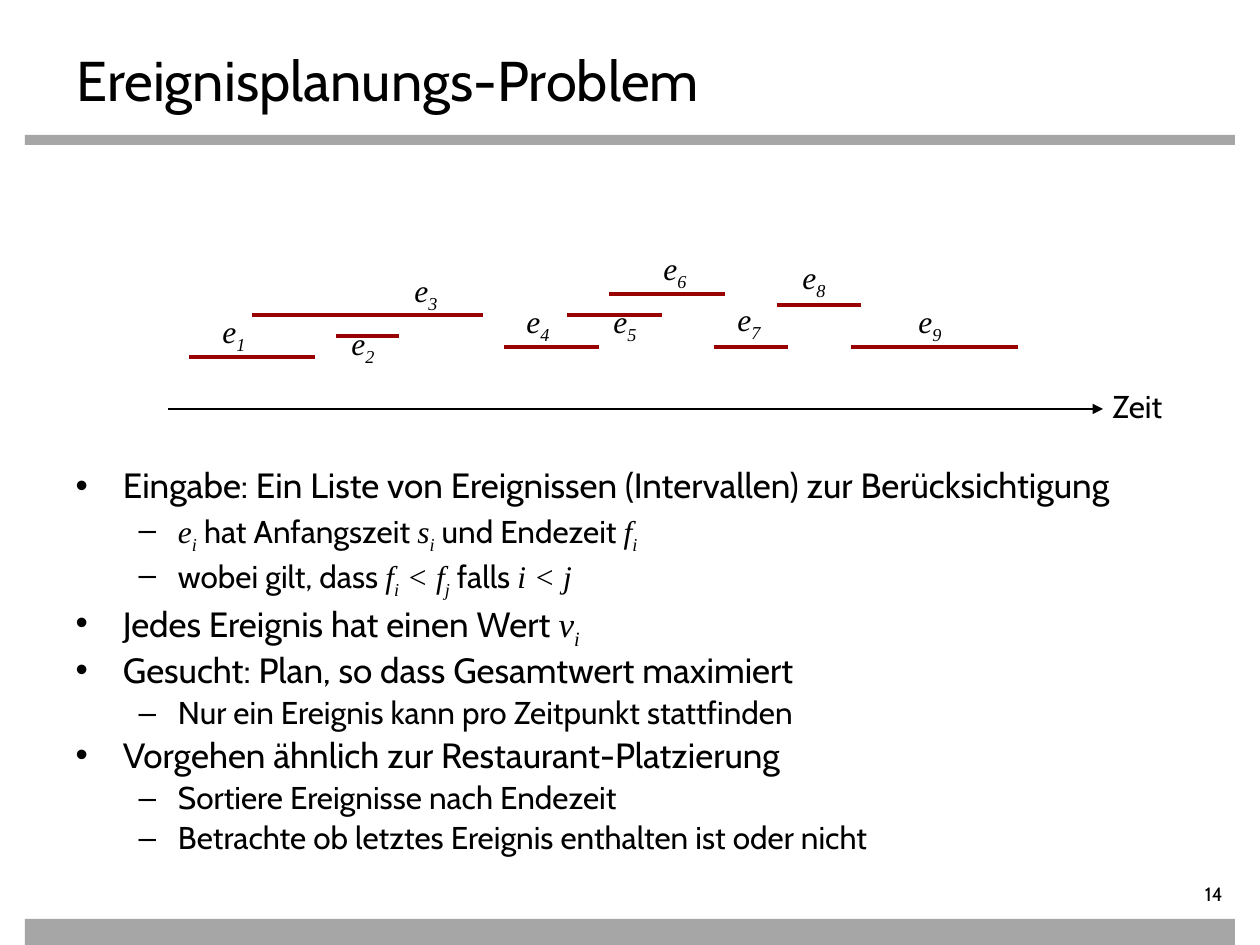
from typing import NamedTuple

from lxml.etree import SubElement
from pptx import Presentation
from pptx.dml.color import RGBColor
from pptx.enum.shapes import MSO_CONNECTOR as Connector, MSO_SHAPE as Shape
from pptx.enum.text import MSO_ANCHOR as Anchor, MSO_AUTO_SIZE as AutoSize, PP_ALIGN as Align
from pptx.oxml.ns import qn
from pptx.util import Emu, Pt

EMU_PER_PX = 914400 / 126
COLORS = {"text": "000000", "bar": "A6A6A6", "event": "990000"}
SANS, SERIF = "Cabin", "Times New Roman"


class Box(NamedTuple):
    left: int
    top: int
    width: int
    height: int


class Run(NamedTuple):
    text: str
    math: bool = False
    sub: bool = False


class Item(NamedTuple):
    level: int
    runs: list[Run]


class Event(NamedTuple):
    start: int
    end: int
    y: int
    label_left: int
    label_top: int


def px(length: int) -> Emu:
    return Emu(round(length * EMU_PER_PX))


def color(name: str) -> RGBColor:
    return RGBColor.from_string(COLORS[name])


def indexed(symbol: str, index: str) -> list[Run]:
    """A variable in italics with its subscript."""
    return [Run(symbol, math=True), Run(index, math=True, sub=True)]


def write(paragraph, runs: list[Run], size: int) -> None:
    for part in runs:
        run = paragraph.add_run()
        run.text = part.text
        formats = {"name": SERIF if part.math else SANS, "size": Pt(size), "italic": part.math}
        for name, value in formats.items():
            setattr(run.font, name, value)
        run.font.color.rgb = color("text")
        if part.sub:
            run.font._element.set("baseline", "-25000")


def place(shape, box: Box) -> None:
    for name, value in box._asdict().items():
        setattr(shape, name, px(value))


def add_bar(slide, box: Box) -> None:
    bar = slide.shapes.add_shape(Shape.RECTANGLE, *map(px, box))
    bar.shadow.inherit = False
    bar.fill.solid()
    bar.fill.fore_color.rgb = color("bar")
    bar.line.fill.background()


def add_line(slide, start: int, end: int, y: int, color_name: str, width: float):
    line = slide.shapes.add_connector(Connector.STRAIGHT, px(start), px(y), px(end), px(y))
    line.line.color.rgb = color(color_name)
    line.line.width = Pt(width)
    SubElement(line._element.spPr, qn("a:effectLst"))
    return line


def add_label(slide, box: Box, runs: list[Run], size: int = 18):
    label = slide.shapes.add_textbox(*map(px, box))
    label.text_frame.word_wrap = False
    write(label.text_frame.paragraphs[0], runs, size)
    return label.text_frame


EVENTS = [
    Event(189, 315, 357, 210, 306),
    Event(336, 399, 336, 339, 318),
    Event(252, 483, 315, 402, 265),
    Event(504, 599, 347, 514, 296),
    Event(567, 662, 315, 601, 296),
    Event(609, 725, 294, 651, 243),
    Event(714, 788, 347, 725, 294),
    Event(777, 861, 305, 790, 252),
    Event(851, 1018, 347, 906, 296),
]

ITEMS = [
    Item(0, [Run("Eingabe: Ein Liste von Ereignissen (Intervallen) zur Berücksichtigung")]),
    Item(1, [*indexed("e", "i"), Run(" hat Anfangszeit "), *indexed("s", "i"),
             Run(" und Endezeit "), *indexed("f", "i")]),
    Item(1, [Run("wobei gilt, dass "), *indexed("f", "i"), *indexed(" < f", "j"),
             Run(" falls "), Run("i < j", math=True)]),
    Item(0, [Run("Jedes Ereignis hat einen Wert "), *indexed("v", "i")]),
    Item(0, [Run("Gesucht: Plan, so dass Gesamtwert maximiert")]),
    Item(1, [Run("Nur ein Ereignis kann pro Zeitpunkt stattfinden")]),
    Item(0, [Run("Vorgehen ähnlich zur Restaurant-Platzierung")]),
    Item(1, [Run("Sortiere Ereignisse nach Endezeit")]),
    Item(1, [Run("Betrachte ob letztes Ereignis enthalten ist oder nicht")]),
]


def fill_title(title) -> None:
    place(title, Box(64, 35, 1134, 69))
    frame = title.text_frame
    frame.auto_size = AutoSize.NONE
    frame.vertical_anchor = Anchor.TOP
    frame.margin_top = px(10)
    frame.paragraphs[0].alignment = Align.LEFT
    write(frame.paragraphs[0], [Run("Ereignisplanungs-Problem")], 32)


def fill_body(body) -> None:
    """Bullets, indents and paragraph gaps come from the template's list levels."""
    place(body, Box(63, 462, 1134, 417))
    frame = body.text_frame
    frame.auto_size = AutoSize.NONE
    for number, item in enumerate(ITEMS):
        paragraph = frame.add_paragraph() if number else frame.paragraphs[0]
        paragraph.level = item.level
        paragraph.line_spacing = 0.9
        write(paragraph, item.runs, 18 if item.level else 20)
    frame.paragraphs[0].space_before = Pt(0)


def add_timeline(slide) -> None:
    axis = add_line(slide, 168, 1103, 409, "text", 1.5)
    SubElement(axis.line._get_or_add_ln(), qn("a:tailEnd"), type="triangle")
    for event in EVENTS:
        add_line(slide, event.start, event.end, event.y, "event", 2.25)
    add_label(slide, Box(1100, 381, 78, 50), [Run("Zeit")])
    for number, event in enumerate(EVENTS, start=1):
        add_label(slide, Box(event.label_left, event.label_top, 58, 50), indexed("e", str(number)))


def add_page_number(slide) -> None:
    frame = add_label(slide, Box(1096, 882, 139, 28), [Run("14")], 11)
    frame.word_wrap = True
    frame.paragraphs[0].alignment = Align.RIGHT
    for side in ("left", "top", "bottom"):
        setattr(frame, f"margin_{side}", 0)


def main() -> None:
    deck = Presentation()
    deck.slide_width, deck.slide_height = px(1260), px(945)
    slide = deck.slides.add_slide(deck.slide_layouts[1])
    add_bar(slide, Box(25, 135, 1210, 10))
    add_bar(slide, Box(25, 919, 1210, 26))
    fill_title(slide.shapes.title)
    fill_body(slide.placeholders[1])
    add_timeline(slide)
    add_page_number(slide)
    deck.save("out.pptx")


if __name__ == "__main__":
    main()
